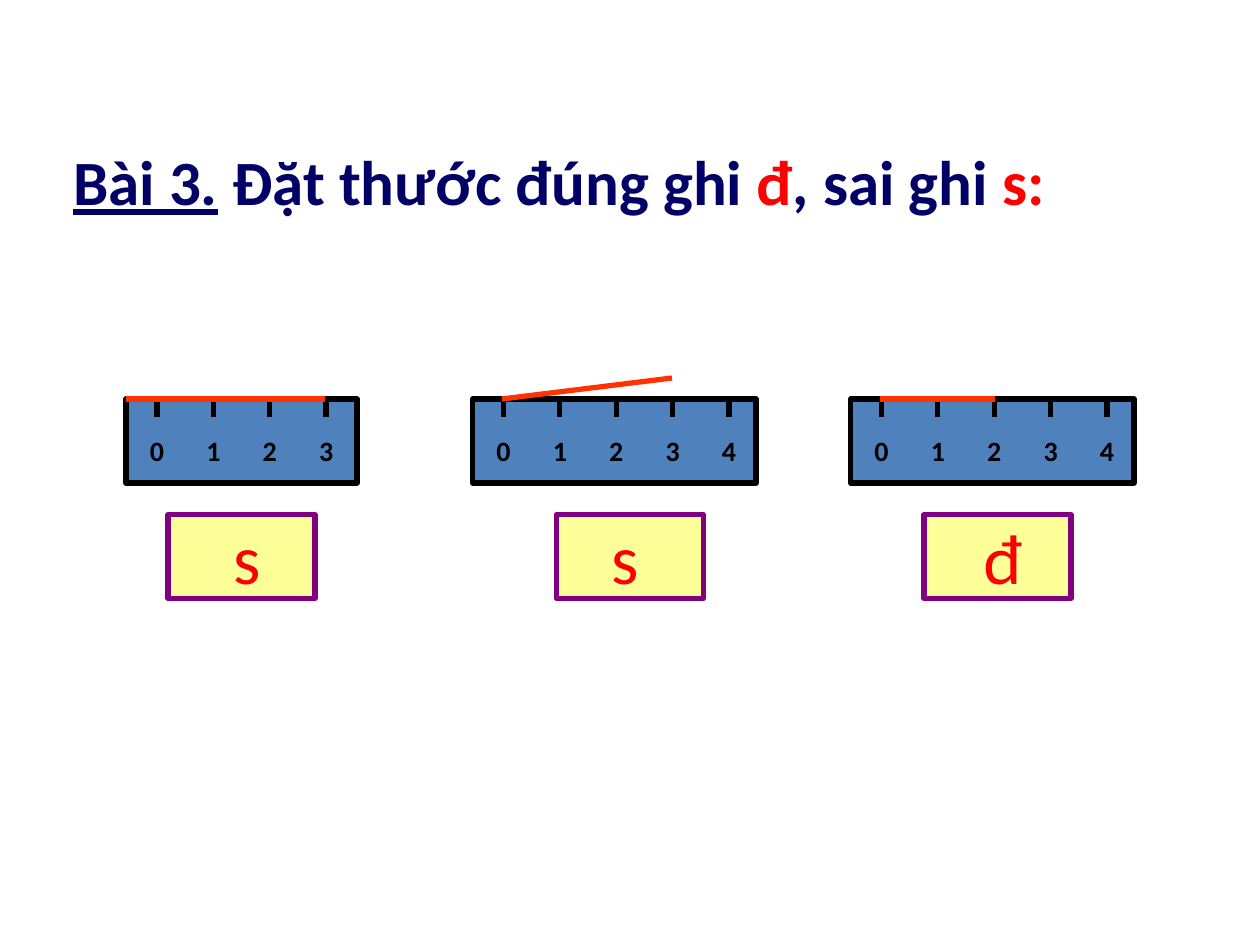
from pptx import Presentation
from pptx.dml.color import RGBColor
from pptx.enum.shapes import MSO_CONNECTOR, MSO_SHAPE
from pptx.enum.text import MSO_ANCHOR, MSO_AUTO_SIZE, PP_ALIGN
from pptx.util import Inches, Pt
from lxml.etree import SubElement
from pptx.oxml.ns import qn

COLS = 120
TITLE = {"size": Pt(36), "bold": True, "name": "Calibri"}
DIGIT = {"size": Pt(16), "bold": True, "name": "Calibri"}
MARK = {"size": Pt(40), "bold": False, "name": "Calibri"}
RED, NAVY, BLACK = "FF0000", "000066", "000000"


def tint(code):
    """Turn a hex string into a colour."""
    return RGBColor.from_string(code)


def style(item, **vals):
    """Set each named value on an item."""
    for key, val in vals.items():
        setattr(item, key, val)


def scale(*cells):
    """Turn grid cells into slide lengths."""
    return [round(cell * unit) for cell in cells]


def write(para, text, code, look):
    """Add one run of text and return its font."""
    run = para.add_run()
    run.text = text
    style(run.font, **look)
    run.font.color.rgb = tint(code)
    return run.font


def rect(shapes, box, fill, edge):
    """Draw a filled box with a thick edge."""
    shape = shapes.add_shape(MSO_SHAPE.RECTANGLE, *scale(*box))
    shape.shadow.inherit = False
    shape.fill.solid()
    shape.fill.fore_color.rgb = tint(fill)
    shape.line.color.rgb = tint(edge)
    shape.line.width = Pt(3)


def stroke(shapes, ends, code):
    """Draw a thick straight line."""
    line = shapes.add_connector(MSO_CONNECTOR.STRAIGHT, *scale(*ends))
    line.line.color.rgb = tint(code)
    line.line.width = Pt(3)
    SubElement(line._element.spPr, qn("a:effectLst"))


def label(shapes, box, text, code, look, anchor):
    """Place a short centred text."""
    frame = shapes.add_textbox(*scale(*box)).text_frame
    style(frame, word_wrap=True, vertical_anchor=anchor,
          margin_left=0, margin_right=0)
    para = frame.paragraphs[0]
    para.alignment = PP_ALIGN.CENTER
    write(para, text, code, look)


def heading(slide, box):
    """Fill the title placeholder."""
    title = slide.shapes.title
    left, top, width, height = scale(*box)
    style(title, left=left, top=top, width=width, height=height)
    frame = title.text_frame
    style(frame, word_wrap=True, auto_size=MSO_AUTO_SIZE.NONE,
          vertical_anchor=MSO_ANCHOR.TOP)
    para = frame.paragraphs[0]
    para.alignment = PP_ALIGN.LEFT
    write(para, "Bài 3.", NAVY, TITLE).underline = True
    for text, code in ((" Đặt thước đúng ghi ", NAVY), ("đ", RED),
                       (", sai ghi ", NAVY), ("s:", RED)):
        write(para, text, code, TITLE)


def ruler(slide, box, count, bar):
    """Draw a numbered ruler and the red bar it measures."""
    left, top, width, height = box
    group = slide.shapes.add_group_shape().shapes
    rect(group, box, "4F81BD", BLACK)
    for num in range(count):
        tick = left + 2.95 + num * 5.37
        stroke(group, (tick, top, tick, top + 1.75), BLACK)
        label(group, (tick - 1.85, top + 2.7, 3.7, 4.4), str(num),
              BLACK, DIGIT, MSO_ANCHOR.TOP)
    start, end, rise = bar
    stroke(slide.shapes, (left + start, top, left + end, top - rise),
           "FF3300")


def answer(slide, box, shift, text):
    """Draw an answer box with its letter."""
    left, top, width, height = box
    rect(slide.shapes, box, "FFFF99", "800080")
    label(slide.shapes, (left + shift, top, width + 1, height), text,
          RED, MARK, MSO_ANCHOR.MIDDLE)


def build(slide):
    """Lay out the title and the three tasks."""
    heading(slide, (5.76, 13, 108.5, 8.5))
    tasks = (
        (12, 22, 4, (0, 19, 0), 16, 0, "s"),
        (45, 27, 5, (2.8, 19, 2), 53, -1, "s"),
        (81, 27, 5, (2.8, 13.8, 0), 88, 0, "đ"),
    )
    for left, width, count, bar, spot, shift, text in tasks:
        ruler(slide, (left, 38, width, 8), count, bar)
        answer(slide, (spot, 49, 14, 8), shift, text)


deck = Presentation()
style(deck, slide_width=Inches(10), slide_height=Inches(7.5))
unit = deck.slide_width / COLS
build(deck.slides.add_slide(deck.slide_layouts[5]))
deck.save("out.pptx")
